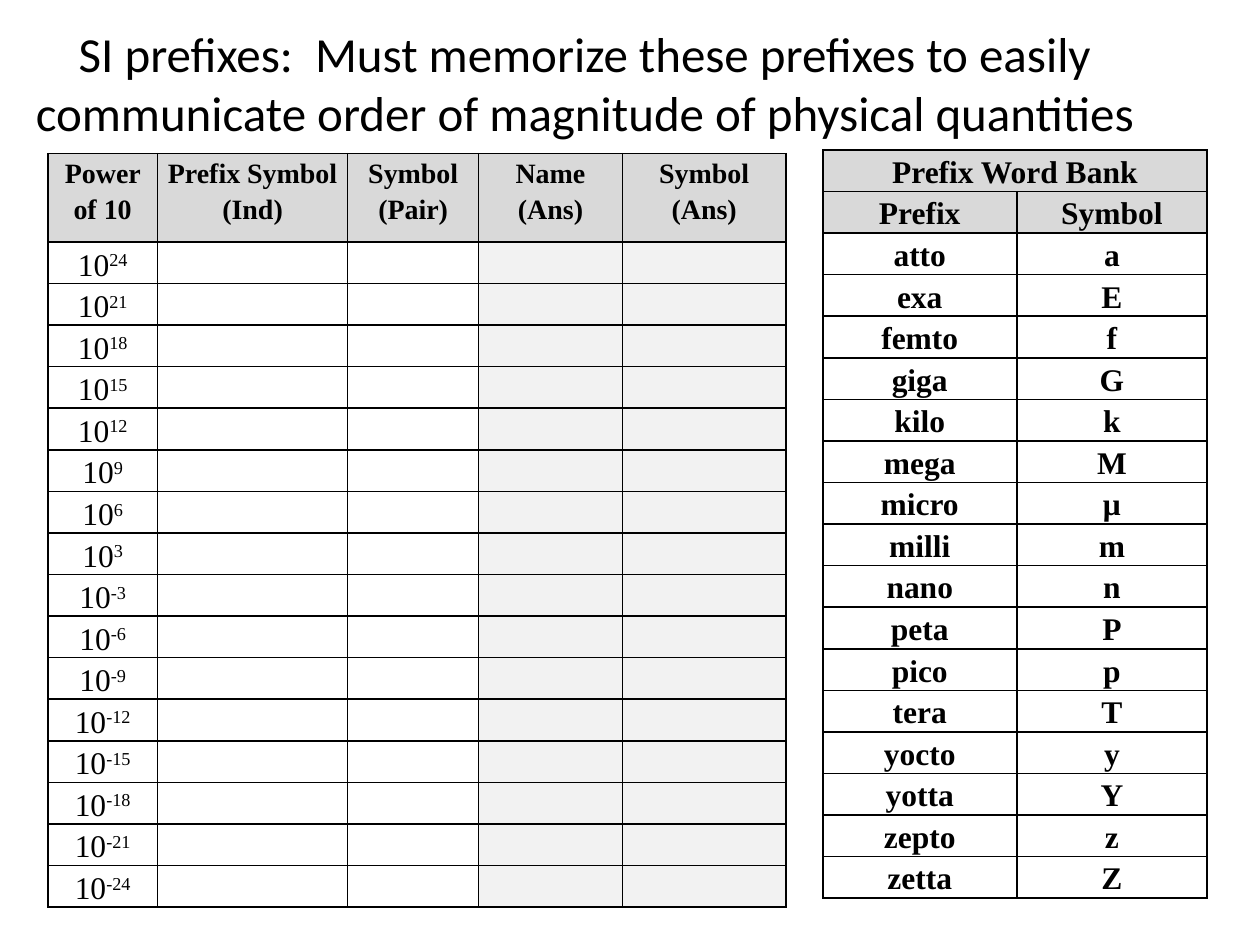
from lxml.etree import SubElement
from pptx import Presentation
from pptx.dml.color import RGBColor
from pptx.enum.text import MSO_ANCHOR as Anchor, MSO_AUTO_SIZE as AutoSize, PP_ALIGN as Align
from pptx.oxml.ns import qn
from pptx.util import Inches, Pt

BLACK = RGBColor(0x00, 0x00, 0x00)
HEADER_GRAY = RGBColor(0xD9, 0xD9, 0xD9)
ANSWER_GRAY = RGBColor(0xF2, 0xF2, 0xF2)
SERIF = "Times New Roman"
ROW_HEIGHT = 0.33

TITLE = ("SI prefixes:  Must memorize these prefixes to easily "
         "communicate order of magnitude of physical quantities")
HEADINGS = ["Power of 10", "Prefix Symbol (Ind)", "Symbol (Pair)", "Name (Ans)", "Symbol (Ans)"]
EXPONENTS = [*range(24, 0, -3), *range(-3, -25, -3)]
WORD_BANK = [
    ("atto", "a"), ("exa", "E"), ("femto", "f"), ("giga", "G"),
    ("kilo", "k"), ("mega", "M"), ("micro", "μ"), ("milli", "m"),
    ("nano", "n"), ("peta", "P"), ("pico", "p"), ("tera", "T"),
    ("yocto", "y"), ("yotta", "Y"), ("zepto", "z"), ("zetta", "Z"),
]


def add_span(para, text, size=18, bold=False, font=SERIF, superscript=False):
    span = para.add_run()
    span.text = text
    span.font.name = font
    span.font.size = Pt(size)
    span.font.bold = bold
    span.font.color.rgb = BLACK
    if superscript:
        span.font._element.set("baseline", "30000")


def add_title(page, text):
    title = page.shapes.title
    title.left, title.top, title.width, title.height = map(Inches, (0.14, 0.15, 9, 1.01))
    frame = title.text_frame
    frame.word_wrap = True
    frame.auto_size = AutoSize.NONE
    frame.vertical_anchor = Anchor.MIDDLE
    para = frame.paragraphs[0]
    para.alignment = Align.CENTER
    add_span(para, text, size=28, font="Calibri")


def add_borders(cell):
    properties = cell._tc.get_or_add_tcPr()
    for side in ("lnL", "lnR", "lnT", "lnB"):
        line = SubElement(properties, qn(f"a:{side}"), w=str(Pt(1)))
        fill = SubElement(line, qn("a:solidFill"))
        SubElement(fill, qn("a:srgbClr"), val=str(BLACK))


def format_cell(cell):
    add_borders(cell)
    cell.fill.background()
    cell.margin_left = cell.margin_right = Inches(0.07)
    cell.margin_top = cell.margin_bottom = 0
    para = cell.text_frame.paragraphs[0]
    para.alignment = Align.CENTER
    para.line_spacing = 1.15


def add_grid(page, left, top, widths, heights):
    frame = page.shapes.add_table(len(heights), len(widths), Inches(left), Inches(top),
                                  Inches(sum(widths)), Inches(sum(heights)))
    table = frame.table
    table.first_row = table.horz_banding = False
    for column, width in zip(table.columns, widths):
        column.width = Inches(width)
    for row, height in zip(table.rows, heights):
        row.height = Inches(height)
    for cell in table.iter_cells():
        format_cell(cell)
    return table


def fill_cell(cell, color):
    cell.fill.solid()
    cell.fill.fore_color.rgb = color


def write_cell(cell, text, **style):
    add_span(cell.text_frame.paragraphs[0], text, **style)


def write_header(cell, text, size=18):
    fill_cell(cell, HEADER_GRAY)
    write_cell(cell, text, size=size, bold=True)


def add_powers_table(page):
    heights = [0.7] + [ROW_HEIGHT] * len(EXPONENTS)
    table = add_grid(page, 0.38, 1.22, [0.87, 1.51, 1.04, 1.14, 1.3], heights)
    for column, heading in enumerate(HEADINGS):
        write_header(table.cell(0, column), heading, size=16)
    for row, exponent in enumerate(EXPONENTS, start=1):
        power = table.cell(row, 0)
        power.vertical_anchor = Anchor.MIDDLE
        write_cell(power, "10")
        write_cell(power, str(exponent), superscript=True)
        for column in (3, 4):
            fill_cell(table.cell(row, column), ANSWER_GRAY)


def add_word_bank(page):
    heights = [ROW_HEIGHT] * (len(WORD_BANK) + 2)
    table = add_grid(page, 6.53, 1.19, [1.54, 1.51], heights)
    table.cell(0, 0).merge(table.cell(0, 1))
    write_header(table.cell(0, 0), "Prefix Word Bank")
    for column, heading in enumerate(("Prefix", "Symbol")):
        write_header(table.cell(1, column), heading)
    for row, entry in enumerate(WORD_BANK, start=2):
        for column, text in enumerate(entry):
            write_cell(table.cell(row, column), text, bold=True)


def main():
    deck = Presentation()
    deck.slide_width, deck.slide_height = Inches(10), Inches(7.5)
    page = deck.slides.add_slide(deck.slide_layouts[5])
    add_title(page, TITLE)
    add_powers_table(page)
    add_word_bank(page)
    deck.save("out.pptx")


if __name__ == "__main__":
    main()
